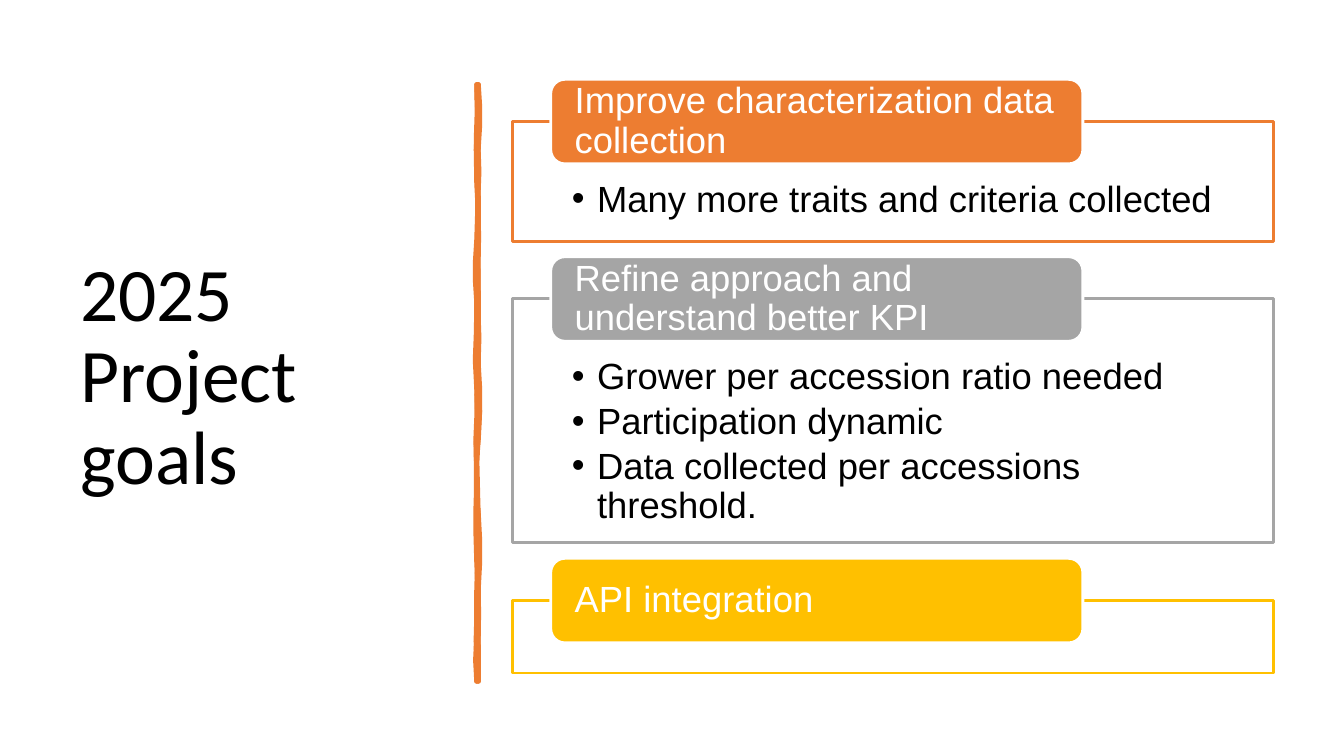
import pptx
import pptx.dml.color
import pptx.enum.shapes
import pptx.enum.text
import pptx.oxml.ns
import pptx.util
from lxml import etree

Cm = pptx.util.Cm
Pt = pptx.util.Pt
MSO_SHAPE = pptx.enum.shapes.MSO_SHAPE
PP_ALIGN = pptx.enum.text.PP_ALIGN
MSO_ANCHOR = pptx.enum.text.MSO_ANCHOR
qn = pptx.oxml.ns.qn

COLORS = {
    "orange": "ED7D31",
    "gray": "A5A5A5",
    "gold": "FFC000",
    "white": "FFFFFF",
    "black": "000000",
}

# Accent, heading, goals, frame height in cm
SECTIONS = [
    ("orange", "Improve characterization data collection",
     ["Many more traits and criteria collected"], 3.02),
    ("gray", "Refine approach and understand better KPI",
     ["Grower per accession ratio needed", "Participation dynamic",
      "Data collected per accessions threshold."], 6.15),
    ("gold", "API integration", [], 1.83),
]
FIRST_FRAME_TOP = 3.06
FRAME_GAP = 1.45
HEADING_RISE = 1.06

# Hand-drawn divider: each curve is (first bulge, second bulge, end y) in cm
DIVIDER_TOP = 2.13
RIGHT_X, LEFT_X = 12.06, 12.01
CURVE_STEPS = 3
STROKES = [
    ([(.05, .05, 3.71), (-.05, .03, 5.74), (-.03, 0, 7.47), (-.03, .05, 9.04),
      (-.05, .1, 11.07), (-.1, -.08, 12.95), (.05, .05, 14.83), (-.05, .03, 17.17)],
     [(.03, -.05, 15.57), (.03, .03, 14.15), (-.03, -.03, 12.12), (0, -.05, 10.54),
      (.03, -.03, 8.51), (.03, -.03, 6.35), (.03, .05, 4.6), (-.08, .1, 2.13)]),
    ([(0, -.08, 3.86), (.05, -.03, 5.28), (.03, -.03, 7.47), (.03, -.05, 9.19),
      (.05, .05, 10.92), (-.08, 0, 13.11), (0, -.03, 14.68), (.03, -.03, 17.17)],
     [(-.08, .03, 15.57), (-.03, .05, 13.69), (-.05, .08, 11.96), (-.08, .1, 9.8),
      (-.1, .03, 7.62), (-.05, -.05, 6.05), (.03, .03, 4.17), (-.05, .05, 2.13)]),
]


def rgb(name):
    return pptx.dml.color.RGBColor.from_string(COLORS[name])


def style_shape(shape, fill, line, width):
    shape.shadow.inherit = False
    shape.fill.solid()
    shape.fill.fore_color.rgb = rgb(fill)
    shape.line.color.rgb = rgb(line)
    shape.line.width = Pt(width)


def set_frame(shape, anchor, left, top, right, bottom):
    """Set wrapping, anchor and insets (cm) and return the text frame."""
    frame = shape.text_frame
    frame.word_wrap = True
    frame.vertical_anchor = anchor
    frame.margin_left, frame.margin_top = Cm(left), Cm(top)
    frame.margin_right, frame.margin_bottom = Cm(right), Cm(bottom)
    return frame


def write(paragraph, text, size, font, color):
    paragraph.alignment = PP_ALIGN.LEFT
    paragraph.line_spacing = 0.9
    run = paragraph.add_run()
    run.text = text
    run.font.size = Pt(size)
    run.font.name = font
    run.font.color.rgb = rgb(color)


def add_bullet(paragraph):
    properties = paragraph._p.get_or_add_pPr()
    properties.set("marL", str(Cm(0.64)))
    properties.set("indent", str(-Cm(0.64)))
    etree.SubElement(properties, qn("a:buFont")).set("typeface", "Arial")
    etree.SubElement(properties, qn("a:buChar")).set("char", "•")


def add_title(slide, text):
    box = slide.shapes.add_textbox(Cm(1.77), Cm(1.77), Cm(9.5), Cm(15.52))
    frame = set_frame(box, MSO_ANCHOR.MIDDLE, 0.25, 0.13, 0.25, 0.13)
    write(frame.paragraphs[0], text, 54, "Calibri", "black")


def edge_points(x, start_y, curves):
    """Sample the cubic curves that run along one edge of the divider."""
    points = []
    for bulge_1, bulge_2, end_y in curves:
        for step in range(1, CURVE_STEPS + 1):
            t = step / CURVE_STEPS
            offset = 3 * t * (1 - t) * ((1 - t) * bulge_1 + t * bulge_2)
            points.append((Cm(x + offset), Cm(start_y + t * (end_y - start_y))))
        start_y = end_y
    return points


def add_divider(slide):
    start = Cm(RIGHT_X), Cm(DIVIDER_TOP)
    builder = slide.shapes.build_freeform(*start)
    for index, (right, left) in enumerate(STROKES):
        if index:
            builder.move_to(*start)
        bottom = right[-1][2]
        points = edge_points(RIGHT_X, DIVIDER_TOP, right)
        points.append((Cm(LEFT_X), Cm(bottom)))
        points += edge_points(LEFT_X, bottom, left)
        builder.add_line_segments(points, close=True)
    style_shape(builder.convert_to_shape(), "orange", "orange", 3.25)


def add_goal_frame(slide, top, height, accent, goals):
    panel = slide.shapes.add_shape(
        MSO_SHAPE.RECTANGLE, Cm(12.92), Cm(top), Cm(19.18), Cm(height))
    style_shape(panel, "white", accent, 2)
    color = panel.fill._xPr.find(".//" + qn("a:srgbClr"))
    etree.SubElement(color, qn("a:alpha")).set("val", "90000")
    frame = set_frame(panel, MSO_ANCHOR.TOP, 1.49, 1.5, 1.5, 0.5)
    for index, goal in enumerate(goals):
        paragraph = frame.add_paragraph() if index else frame.paragraphs[0]
        add_bullet(paragraph)
        if index:
            paragraph.space_before = Pt(3.9)
        write(paragraph, goal, 26, "Arial", "black")


def add_heading(slide, top, accent, text):
    tab = slide.shapes.add_shape(
        MSO_SHAPE.ROUNDED_RECTANGLE, Cm(13.88), Cm(top), Cm(13.41), Cm(2.13))
    tab.adjustments[0] = 0.167
    style_shape(tab, accent, "white", 2)
    frame = set_frame(tab, MSO_ANCHOR.MIDDLE, 0.5, 0, 0.5, 0)
    write(frame.paragraphs[0], text, 26, "Arial", "white")


def main():
    deck = pptx.Presentation()
    deck.slide_width, deck.slide_height = Cm(33.87), Cm(19.05)
    slide = deck.slides.add_slide(deck.slide_layouts[6])

    add_title(slide, "2025 Project goals")
    add_divider(slide)

    top = FIRST_FRAME_TOP
    for accent, heading, goals, height in SECTIONS:
        add_goal_frame(slide, top, height, accent, goals)
        add_heading(slide, top - HEADING_RISE, accent, heading)
        top += height + FRAME_GAP

    deck.save("out.pptx")


if __name__ == "__main__":
    main()
